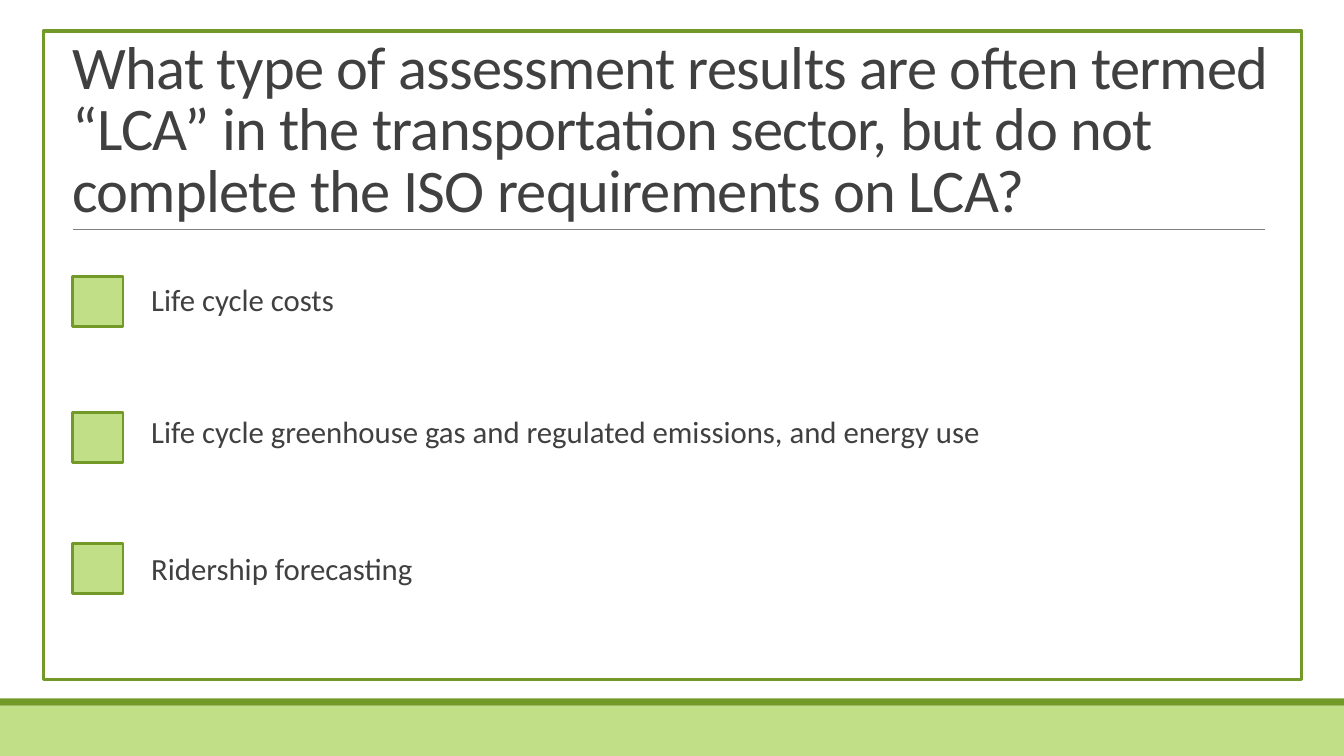
from lxml import etree
from pptx import Presentation
from pptx.dml.color import RGBColor
from pptx.enum.shapes import MSO_CONNECTOR, MSO_SHAPE
from pptx.enum.text import MSO_ANCHOR
from pptx.oxml.ns import qn
from pptx.util import Inches, Pt

QUESTION = ("What type of assessment results are often termed “LCA” in the "
            "transportation sector, but do not complete the ISO requirements on LCA?")
ANSWERS = [
    ("Life cycle costs", 2.74, 2.78, 0.95),
    ("Life cycle greenhouse gas and regulated emissions, and energy use", 4.09, 4.09, 0.66),
    ("Ridership forecasting", 5.39, 5.45, 1.12),
]
COLORS = {"lime": "C1DF87", "olive": "739A28", "text": "404040", "rule": "7F7F7F"}
FONT = "Calibri"
RECT, STRAIGHT = MSO_SHAPE.RECTANGLE, MSO_CONNECTOR.STRAIGHT
TOP, BOTTOM = MSO_ANCHOR.TOP, MSO_ANCHOR.BOTTOM

WIDTH, HEIGHT = 13.33, 7.5
FOOTER_HEIGHT, STRIPE_HEIGHT = 0.5, 0.07
FOOTER_TOP = HEIGHT - FOOTER_HEIGHT
MARGIN, RULE_END, RULE_Y = 0.72, 12.55, 2.28
CHECKBOX = 0.5
ANSWER_LEFT, ANSWER_WIDTH = 1.5, 10.82

prs = Presentation()
prs.slide_width, prs.slide_height = Inches(WIDTH), Inches(HEIGHT)
slide = prs.slides.add_slide(prs.slide_layouts[6])


def color(name):
    return RGBColor.from_string(COLORS[name])


def add_box(left, top, width, height, fill=None, line=None, weight=0):
    box = slide.shapes.add_shape(RECT, *map(Inches, (left, top, width, height)))
    box.shadow.inherit = False
    if fill:
        box.fill.solid()
        box.fill.fore_color.rgb = color(fill)
    else:
        box.fill.background()
    if line:
        box.line.color.rgb = color(line)
        box.line.width = Pt(weight)
    else:
        box.line.fill.background()


def add_text(text, left, top, width, height, size, spacing, inset, anchor):
    frame = slide.shapes.add_textbox(*map(Inches, (left, top, width, height))).text_frame
    frame.word_wrap = True
    frame.vertical_anchor = anchor
    frame.margin_left = frame.margin_right = Inches(inset)
    frame.margin_top = frame.margin_bottom = Inches(0.05)
    paragraph = frame.paragraphs[0]
    paragraph.line_spacing = spacing
    run = paragraph.add_run()
    run.text = text
    run.font.name = FONT
    run.font.size = Pt(size)
    run.font.color.rgb = color("text")
    return run


add_box(0, FOOTER_TOP, WIDTH, FOOTER_HEIGHT, "lime")
add_box(0, FOOTER_TOP - STRIPE_HEIGHT, WIDTH, STRIPE_HEIGHT, "olive")
add_box(0.43, 0.31, 12.48, 6.43, line="olive", weight=2.5)

question = add_text(QUESTION, 0.62, 0.83, 12.31, 1.45, 43.2, 0.85, 0.1, BOTTOM)
question.font._element.set("spc", "-50")

rule = slide.shapes.add_connector(
    STRAIGHT, *map(Inches, (MARGIN, RULE_Y, RULE_END, RULE_Y)))
rule.line.color.rgb = color("rule")
rule.line.width = Pt(0.5)
etree.SubElement(rule._element.spPr, qn("a:effectLst"))

for answer, checkbox_top, answer_top, answer_height in ANSWERS:
    add_box(MARGIN, checkbox_top, CHECKBOX, CHECKBOX, "lime", "olive", 2)
    add_text(answer, ANSWER_LEFT, answer_top, ANSWER_WIDTH, answer_height, 22, 0.9, 0, TOP)

prs.save("out.pptx")
